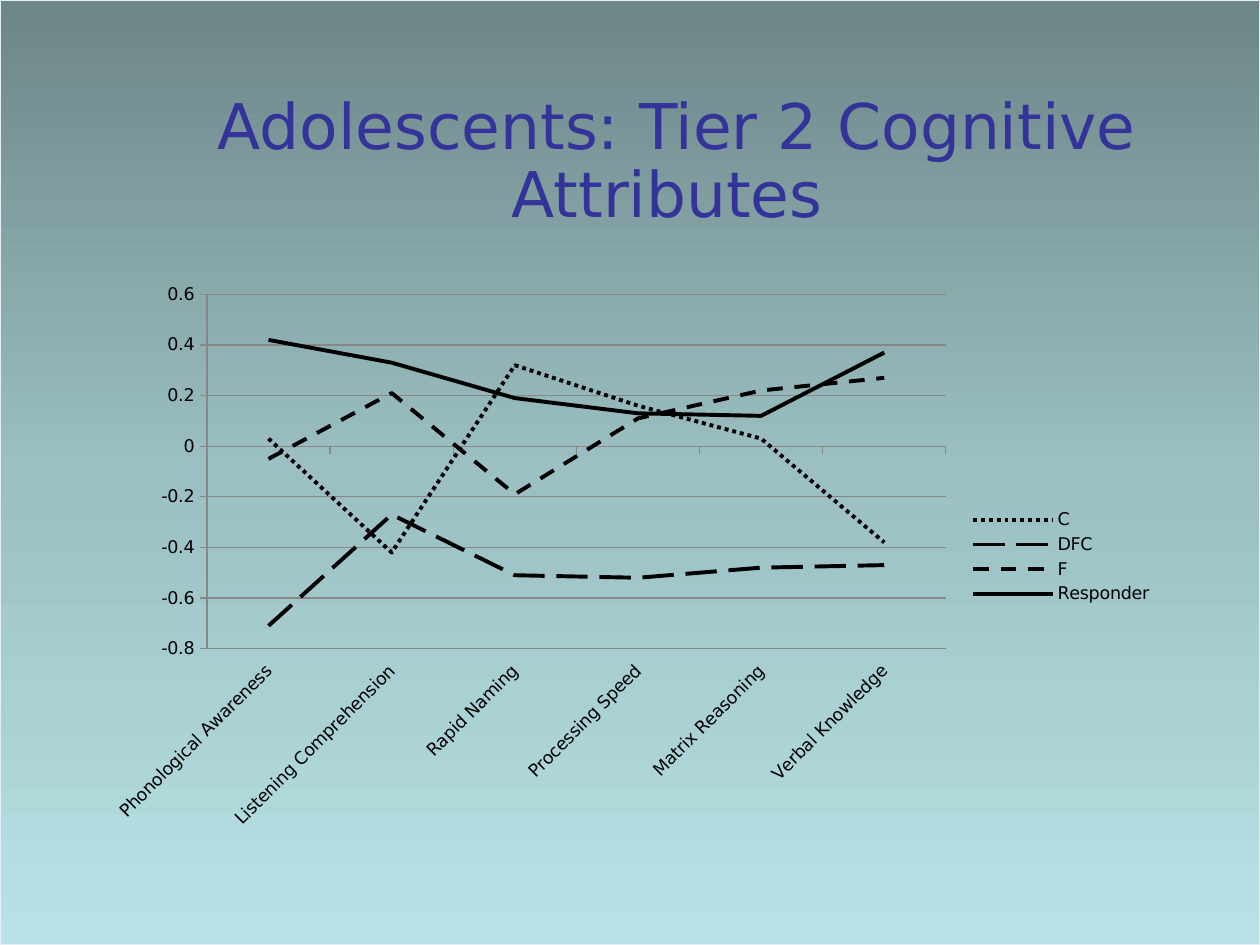
import copy
from dataclasses import dataclass

import pptx
import pptx.chart.data
import pptx.dml.color
import pptx.enum.chart
import pptx.enum.dml
import pptx.enum.shapes
import pptx.enum.text
import pptx.oxml
import pptx.oxml.ns
import pptx.util
from pptx.util import Inches


@dataclass(frozen=True)
class Theme:
    font: str = "DejaVu Sans"
    title_size: int = 36
    chart_size: int = 10
    title: str = "333399"
    ink: str = "000000"
    grid: str = "878787"
    frame: str = "E5EEF4"
    backdrop: tuple = ((0, "6D8688"), (50, "9BBFC2"), (100, "B8E3E6"))


THEME = Theme()
DASH = pptx.enum.dml.MSO_LINE

ATTRIBUTES = ["Phonological Awareness", "Listening Comprehension", "Rapid Naming",
              "Processing Speed", "Matrix Reasoning", "Verbal Knowledge"]
GROUPS = [
    ("C", (0.03, -0.42, 0.32, 0.16, 0.03, -0.38), DASH.ROUND_DOT),
    ("DFC", (-0.71, -0.27, -0.51, -0.52, -0.48, -0.47), DASH.LONG_DASH),
    ("F", (-0.05, 0.21, -0.19, 0.11, 0.22, 0.27), DASH.DASH),
    ("Responder", (0.42, 0.33, 0.19, 0.13, 0.12, 0.37), DASH.SOLID),
]
# Plot area as fractions of the chart frame
PLOT_AREA = {"x": 0.105, "y": 0.037, "w": 0.69, "h": 0.625}


def rgb(color):
    return pptx.dml.color.RGBColor.from_string(color)


def style_font(font, size, color):
    font.name = THEME.font
    font.size = pptx.util.Pt(size)
    font.color.rgb = rgb(color)


def style_line(line, color, width):
    line.color.rgb = rgb(color)
    line.width = pptx.util.Pt(width)


def paint_backdrop(slide):
    fill = slide.background.fill
    fill.gradient()
    fill.gradient_angle = 270
    # The default gradient has two stops; add one for the middle colour
    stop_list = next(slide.element.iter(pptx.oxml.ns.qn("a:gsLst")))
    stop_list.append(copy.deepcopy(stop_list[-1]))
    for stop, (percent, color) in zip(fill.gradient_stops, THEME.backdrop):
        stop.position = percent / 100
        stop.color.rgb = rgb(color)


def add_frame(slide, width, height):
    frame = slide.shapes.add_shape(
        pptx.enum.shapes.MSO_SHAPE.RECTANGLE, 0, 0, width, height)
    frame.shadow.inherit = False
    frame.fill.background()
    style_line(frame.line, THEME.frame, 1)


def set_title(slide, text):
    title = slide.shapes.title
    title.left, title.top = Inches(1.5), Inches(0.67)
    title.width, title.height = Inches(7.75), Inches(1.25)
    text_frame = title.text_frame
    text_frame.word_wrap = True
    text_frame.auto_size = pptx.enum.text.MSO_AUTO_SIZE.NONE
    text_frame.vertical_anchor = pptx.enum.text.MSO_ANCHOR.MIDDLE
    paragraph = text_frame.paragraphs[0]
    paragraph.alignment = pptx.enum.text.PP_ALIGN.CENTER
    paragraph.line_spacing = 0.9
    run = paragraph.add_run()
    run.text = text
    style_font(run.font, THEME.title_size, THEME.title)


def place_plot(chart):
    plot_area = next(chart.element.iter(pptx.oxml.ns.qn("c:plotArea")))
    for old_layout in plot_area.findall(pptx.oxml.ns.qn("c:layout")):
        plot_area.remove(old_layout)
    modes = '<c:xMode val="edge"/><c:yMode val="edge"/>'
    extents = "".join(f'<c:{key} val="{part}"/>' for key, part in PLOT_AREA.items())
    plot_area.insert(0, pptx.oxml.parse_xml(
        f'<c:layout {pptx.oxml.ns.nsdecls("c")}><c:manualLayout>'
        f'<c:layoutTarget val="inner"/>{modes}{extents}'
        '</c:manualLayout></c:layout>'))


def style_axes(chart):
    attributes, scores = chart.category_axis, chart.value_axis
    for axis in (attributes, scores):
        axis.major_tick_mark = pptx.enum.chart.XL_TICK_MARK.OUTSIDE
        axis.minor_tick_mark = pptx.enum.chart.XL_TICK_MARK.NONE
        style_line(axis.format.line, THEME.grid, 0.75)
        style_font(axis.tick_labels.font, THEME.chart_size, THEME.ink)
    attributes.tick_label_position = pptx.enum.chart.XL_TICK_LABEL_POSITION.LOW
    # Slant the attribute names by 45 degrees
    attribute_axis = next(chart.element.iter(pptx.oxml.ns.qn("c:catAx")))
    label_body = next(attribute_axis.iter(pptx.oxml.ns.qn("a:bodyPr")))
    label_body.set("rot", "-2700000")
    label_body.set("vert", "horz")
    scores.minimum_scale, scores.maximum_scale = -0.8, 0.6
    scores.major_unit = 0.2
    scores.has_major_gridlines = True
    style_line(scores.major_gridlines.format.line, THEME.grid, 0.75)


def add_scores_chart(slide):
    data = pptx.chart.data.CategoryChartData()
    data.categories = ATTRIBUTES
    for name, scores, _ in GROUPS:
        data.add_series(name, scores)
    chart = slide.shapes.add_chart(
        pptx.enum.chart.XL_CHART_TYPE.LINE,
        Inches(0.75), Inches(2.17), Inches(8.5), Inches(4.5), data).chart
    chart.has_title = False
    style_font(chart.font, THEME.chart_size, THEME.ink)
    chart.plots[0].vary_by_categories = False

    # One dash pattern per group
    for group, (_, _, dash) in zip(chart.plots[0].series, GROUPS):
        group.smooth = False
        group.marker.style = pptx.enum.chart.XL_MARKER_STYLE.NONE
        style_line(group.format.line, THEME.ink, 2.25)
        group.format.line.dash_style = dash

    style_axes(chart)
    place_plot(chart)
    chart.has_legend = True
    chart.legend.position = pptx.enum.chart.XL_LEGEND_POSITION.RIGHT
    chart.legend.include_in_layout = False
    style_font(chart.legend.font, THEME.chart_size, THEME.ink)


def main():
    deck = pptx.Presentation()
    deck.slide_width, deck.slide_height = Inches(10), Inches(7.5)
    slide = deck.slides.add_slide(deck.slide_layouts[5])
    paint_backdrop(slide)
    add_frame(slide, deck.slide_width, deck.slide_height)
    set_title(slide, "Adolescents: Tier 2 Cognitive Attributes ")
    add_scores_chart(slide)
    deck.save("out.pptx")


if __name__ == "__main__":
    main()
